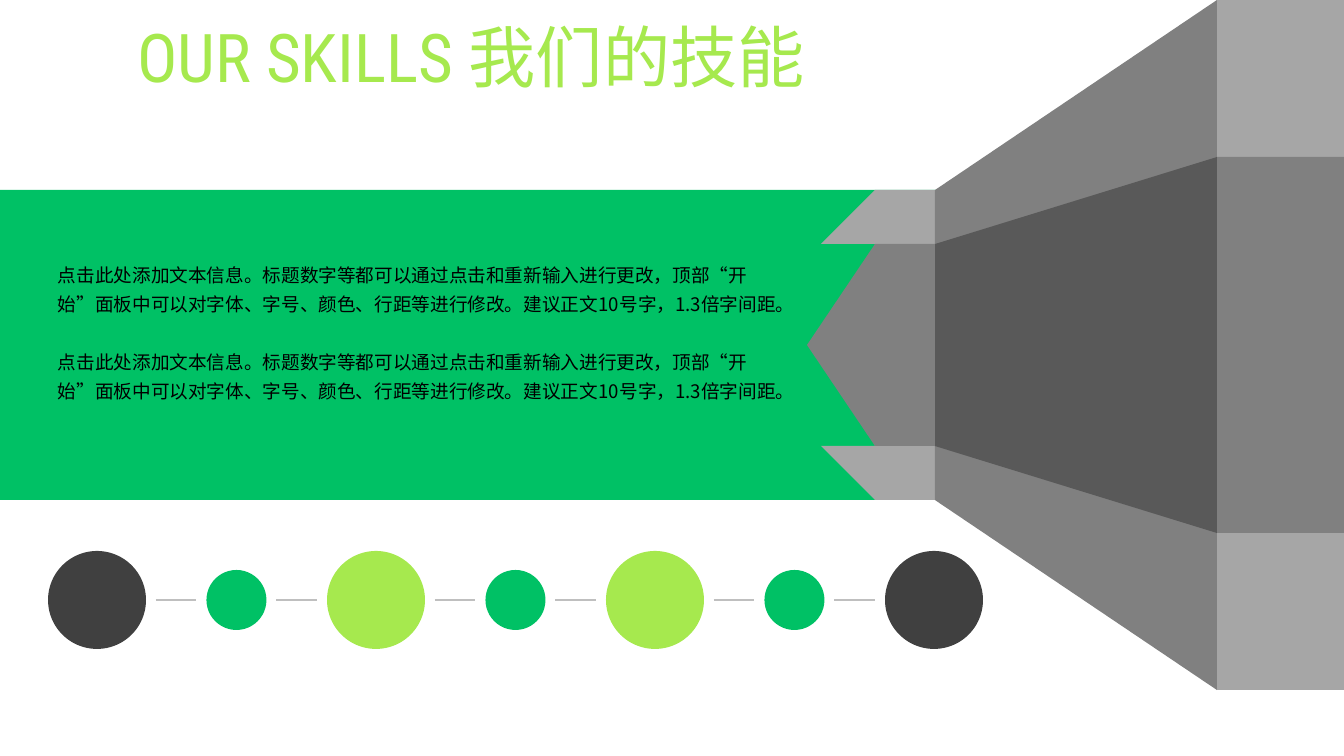
import collections
import itertools

import lxml.etree
import pptx
import pptx.dml.color
import pptx.enum.shapes
import pptx.enum.text
import pptx.oxml.ns
import pptx.util

SCALE = 914400 / 100.8
SHAPE = pptx.enum.shapes.MSO_SHAPE
Box = collections.namedtuple("Box", "x y w h")


class Theme:
    lime = "A6E94E"
    green = "00C165"
    black = "000000"
    charcoal = "404040"
    deep = "595959"
    mid = "808080"
    light = "A6A6A6"
    rule = "BFBFBF"
    title_size = 48
    body_size = 13.3
    rule_width = 1.5
    latin = "Roboto Condensed"
    cjk = "Noto Sans CJK SC"


BODY = (
    "点击此处添加文本信息。标题数字等都可以通过点击和重新输入进行更改，"
    "顶部“开始”面板中可以对字体、字号、颜色、行距等进行修改。"
    "建议正文10号字，1.3倍字间距。"
)


def px(n):
    return pptx.util.Emu(round(n * SCALE))


def rgb(color):
    return pptx.dml.color.RGBColor.from_string(color)


def add_shape(s, kind, box, color, rotation=0):
    x, y, w, h = box
    if rotation == 270:
        x, y, w, h = x + (w - h) / 2, y + (h - w) / 2, h, w
    sp = s.shapes.add_shape(kind, px(x), px(y), px(w), px(h))
    sp.rotation = rotation
    sp.shadow.inherit = False
    sp.fill.solid()
    sp.fill.fore_color.rgb = rgb(color)
    sp.line.fill.background()
    return sp


def add_line(s, x1, x2, y):
    line = s.shapes.add_connector(
        pptx.enum.shapes.MSO_CONNECTOR.STRAIGHT, px(x1), px(y), px(x2), px(y))
    line.line.color.rgb = rgb(Theme.rule)
    line.line.width = pptx.util.Pt(Theme.rule_width)
    lxml.etree.SubElement(line._element.spPr, pptx.oxml.ns.qn("a:effectLst"))


def add_run(p, text, size, font, color):
    r = p.add_run()
    r.text = text
    r.font.size = pptx.util.Pt(size)
    r.font.color.rgb = rgb(color)
    r.font.name = font
    ea = lxml.etree.SubElement(r._r.get_or_add_rPr(), pptx.oxml.ns.qn("a:ea"))
    ea.set("typeface", Theme.cjk)


def fill_title(s, box):
    sp = s.shapes.title
    sp.left, sp.top, sp.width, sp.height = map(px, box)
    tf = sp.text_frame
    tf.word_wrap = True
    tf.auto_size = pptx.enum.text.MSO_AUTO_SIZE.NONE
    tf.vertical_anchor = pptx.enum.text.MSO_ANCHOR.MIDDLE
    p = tf.paragraphs[0]
    p.alignment = pptx.enum.text.PP_ALIGN.LEFT
    p.line_spacing = 0.9
    add_run(p, "OUR SKILLS 我们的技能", Theme.title_size, Theme.latin, Theme.lime)


def draw_pencil_tip(s, box, band):
    collar, cone, butt = box.x + 68, box.x + 128, box.x + 410
    right, bottom = box.x + box.w, box.y + box.h
    edge = 54
    core = Box(butt, box.y + 157, right - butt, box.h - 314)
    inner = Box(collar, band.y + edge, cone - collar, band.h - 2 * edge)
    rect = SHAPE.RECTANGLE

    add_shape(s, rect, Box(collar, band.y, inner.w, band.h), Theme.light)
    add_shape(s, rect, Box(butt, box.y, core.w, box.h), Theme.light)
    add_shape(s, rect, core, Theme.mid)

    for top, height, narrow_top, color in (
        (box.y, bottom - box.y, band.y, Theme.mid),
        (core.y, core.h, inner.y, Theme.deep),
    ):
        side = Box(cone, top, butt - cone, height)
        sp = add_shape(s, SHAPE.TRAPEZOID, side, color, 270)
        sp.adjustments[0] = (narrow_top - top) / side.w

    add_shape(s, rect, inner, Theme.mid)
    point = Box(box.x, inner.y, collar - box.x, inner.h)
    add_shape(s, SHAPE.ISOSCELES_TRIANGLE, point, Theme.mid, 270)
    for y, rotation in ((band.y, 270), (inner.y + inner.h, 180)):
        corner = Box(collar - edge, y, edge, edge)
        add_shape(s, SHAPE.RIGHT_TRIANGLE, corner, Theme.light, rotation)


def add_body(s, box):
    tf = s.shapes.add_textbox(*map(px, box)).text_frame
    tf.word_wrap = True
    for i in range(2):
        p = tf.add_paragraph() if i else tf.paragraphs[0]
        p.line_spacing = 1.3
        if i:
            p.space_before = pptx.util.Pt(21)
        add_run(p, BODY, Theme.body_size, Theme.cjk, Theme.black)


def draw_chain(s, box):
    small, gap = 60, 10
    big = box.h
    colors = (Theme.charcoal, Theme.green, Theme.lime, Theme.green,
              Theme.lime, Theme.green, Theme.charcoal)
    pitch = (box.w - big) / (len(colors) - 1)
    middle = box.y + box.h / 2
    dots = []
    for i, color in enumerate(colors):
        size = small if i % 2 else big
        center = box.x + big / 2 + i * pitch
        dot = Box(center - size / 2, middle - size / 2, size, size)
        add_shape(s, SHAPE.OVAL, dot, color)
        dots.append(dot)
    for a, b in itertools.pairwise(dots):
        add_line(s, a.x + a.w + gap, b.x - gap, middle)


def build_skills_slide(prs, box):
    s = prs.slides.add_slide(prs.slide_layouts[5])
    band = Box(box.x, box.y + 190, box.w, 310)
    fill_title(s, Box(box.x + 127, box.y + 20, 1090, 82))
    add_shape(s, SHAPE.RECTANGLE, band, Theme.green)
    draw_pencil_tip(s, Box(box.x + 807, box.y, box.w - 807, 690), band)
    add_body(s, Box(box.x + 48, band.y + 62, 758, 193))
    draw_chain(s, Box(box.x + 48, box.y + 551, 935, 98))


def main():
    prs = pptx.Presentation()
    page = Box(0, 0, 1344, 756)
    prs.slide_width, prs.slide_height = px(page.w), px(page.h)
    build_skills_slide(prs, page)
    prs.save("out.pptx")


if __name__ == "__main__":
    main()
